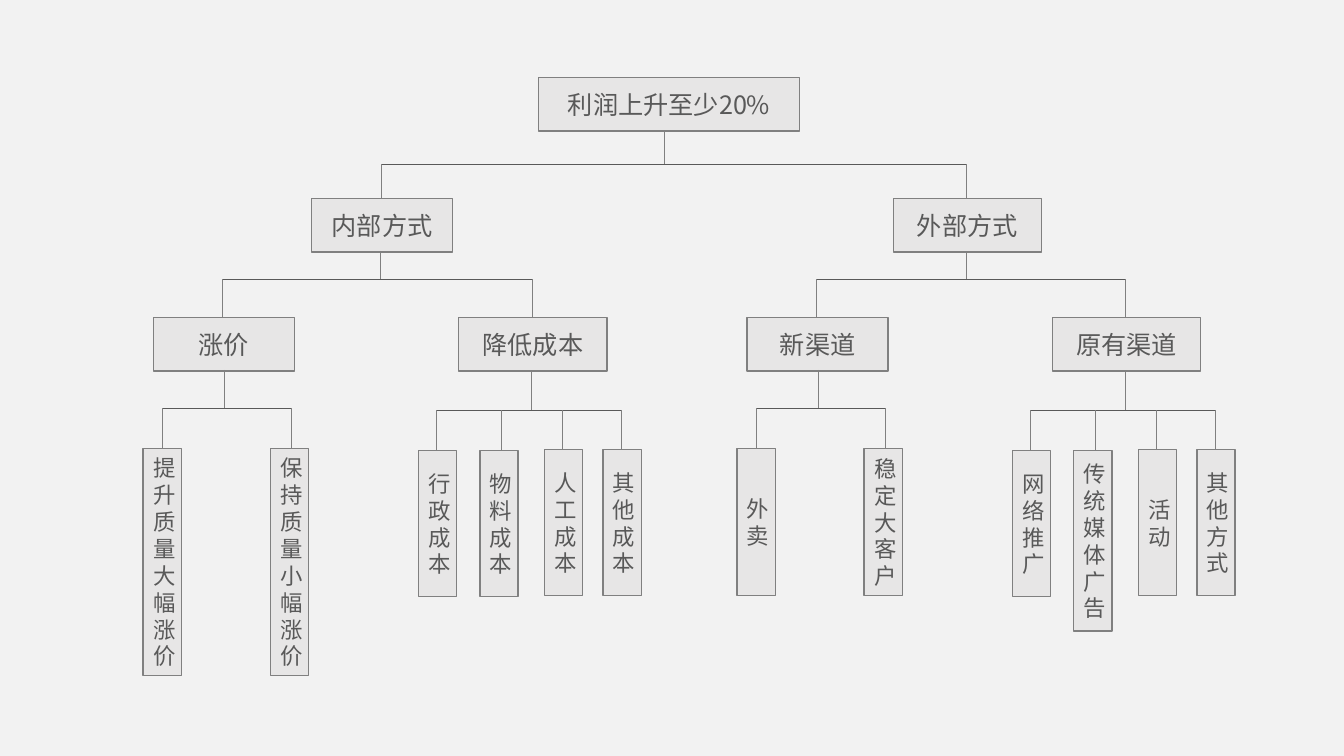
from dataclasses import dataclass

from lxml import etree
from pptx import Presentation
from pptx import util as u
from pptx.dml.color import RGBColor
from pptx.enum import shapes, text
from pptx.oxml import ns
from pptx.slide import Slide

EMU_PER_PX = 9144  # 100 px to the inch
FONT = "Noto Sans CJK SC"
COLORS = {
    "background": "F2F2F2",
    "box": "E7E6E6",
    "border": "808080",
    "bar": "595959",
    "text": "595959",
}
HALF_SHIFT = 589  # from the internal half of the tree to the external half
BOX_H = 53
LEAF_W = 38


@dataclass(frozen=True)
class Box:
    label: str
    left: int
    top: int
    width: int
    height: int = BOX_H
    size: int = 18


@dataclass(frozen=True)
class Branch:
    """A trunk down to a horizontal bar, with drops from the bar."""
    trunk: int
    top: int
    bar: int
    drops: tuple[int, ...]
    bottom: int


@dataclass(frozen=True)
class Half:
    """Labels of one half, and the heights of its leaves."""
    shift: int
    methods: tuple[str, str]
    leaves: tuple[tuple[str, int], ...]


HEAD_BOXES = (
    Box("利润上升至少20%", 534, 77, 259),
    Box("内部方式", 309, 197, 140),
    Box("外部方式", 886, 197, 147),
)
HEAD_BRANCHES = (
    Branch(659, 131, 163, (378, 958), 197),
    Branch(377, 249, 277, (221, 528), 315),
    Branch(958, 251, 277, (810, 1116), 315),
)
HALVES = (
    Half(0, ("涨价", "降低成本"), (
        ("提升质量大幅涨价", 225), ("保持质量小幅涨价", 225),
        ("行政成本", 145), ("物料成本", 145),
        ("人工成本", 145), ("其他成本", 145))),
    Half(HALF_SHIFT, ("新渠道", "原有渠道"), (
        ("外卖", 146), ("稳定大客户", 146),
        ("网络推广", 145), ("传统媒体广告", 179),
        ("活动", 145), ("其他方式", 145))),
)
METHOD_PLACES = ((152, 140), (455, 147))  # left, width
LEAF_PLACES = ((142, 445), (268, 445), (415, 447),
               (476, 447), (540, 446), (598, 446))  # left, top
LEAF_BRANCHES = (
    Branch(223, 367, 405, (161, 289), 444),
    Branch(527, 368, 407, (433, 497, 558, 616), 446),
)


def px(n: int) -> u.Emu:
    return u.Emu(n * EMU_PER_PX)


def rgb(name: str) -> RGBColor:
    return RGBColor.from_string(COLORS[name])


def draw_box(s: Slide, box: Box) -> None:
    sp = s.shapes.add_shape(shapes.MSO_SHAPE.RECTANGLE, px(box.left),
                            px(box.top), px(box.width), px(box.height))
    sp.shadow.inherit = False
    sp.fill.solid()
    sp.fill.fore_color.rgb = rgb("box")
    sp.line.color.rgb = rgb("border")
    sp.line.width = u.Pt(1)
    tf = sp.text_frame
    tf.word_wrap = True
    tf.vertical_anchor = text.MSO_ANCHOR.MIDDLE
    p = tf.paragraphs[0]
    p.text = box.label
    p.alignment = text.PP_ALIGN.CENTER
    p.font.name = FONT
    p.font.size = u.Pt(box.size)
    p.font.color.rgb = rgb("text")
    # East Asian glyphs take their own typeface setting
    latin = p.font._element.find(ns.qn("a:latin"))
    ea = etree.Element(ns.qn("a:ea"), typeface=FONT)
    latin.addnext(ea)


def draw_line(s: Slide, x1: int, y1: int, x2: int, y2: int,
              color: str = "border") -> None:
    line = s.shapes.add_connector(shapes.MSO_CONNECTOR.STRAIGHT,
                                  px(x1), px(y1), px(x2), px(y2))
    line.line.color.rgb = rgb(color)
    line.line.width = u.Pt(0.5)
    etree.SubElement(line._element.spPr, ns.qn("a:effectLst"))


def draw_branch(s: Slide, branch: Branch, shift: int = 0) -> None:
    drops = [x + shift for x in branch.drops]
    trunk = branch.trunk + shift
    draw_line(s, drops[0], branch.bar, drops[-1], branch.bar, "bar")
    draw_line(s, trunk, branch.top, trunk, branch.bar)
    for x in drops:
        draw_line(s, x, branch.bar, x, branch.bottom)


def draw_half(s: Slide, half: Half) -> None:
    for label, (left, width) in zip(half.methods, METHOD_PLACES):
        draw_box(s, Box(label, left + half.shift, 315, width))
    for branch in LEAF_BRANCHES:
        draw_branch(s, branch, half.shift)
    for (label, height), (left, top) in zip(half.leaves, LEAF_PLACES):
        draw_box(s, Box(label, left + half.shift, top, LEAF_W, height, 16))


def main() -> None:
    prs = Presentation()
    prs.slide_width, prs.slide_height = px(1333), px(750)
    s = prs.slides.add_slide(prs.slide_layouts[6])
    s.background.fill.solid()
    s.background.fill.fore_color.rgb = rgb("background")
    for box in HEAD_BOXES:
        draw_box(s, box)
    for branch in HEAD_BRANCHES:
        draw_branch(s, branch)
    for half in HALVES:
        draw_half(s, half)
    prs.save("out.pptx")


if __name__ == "__main__":
    main()
